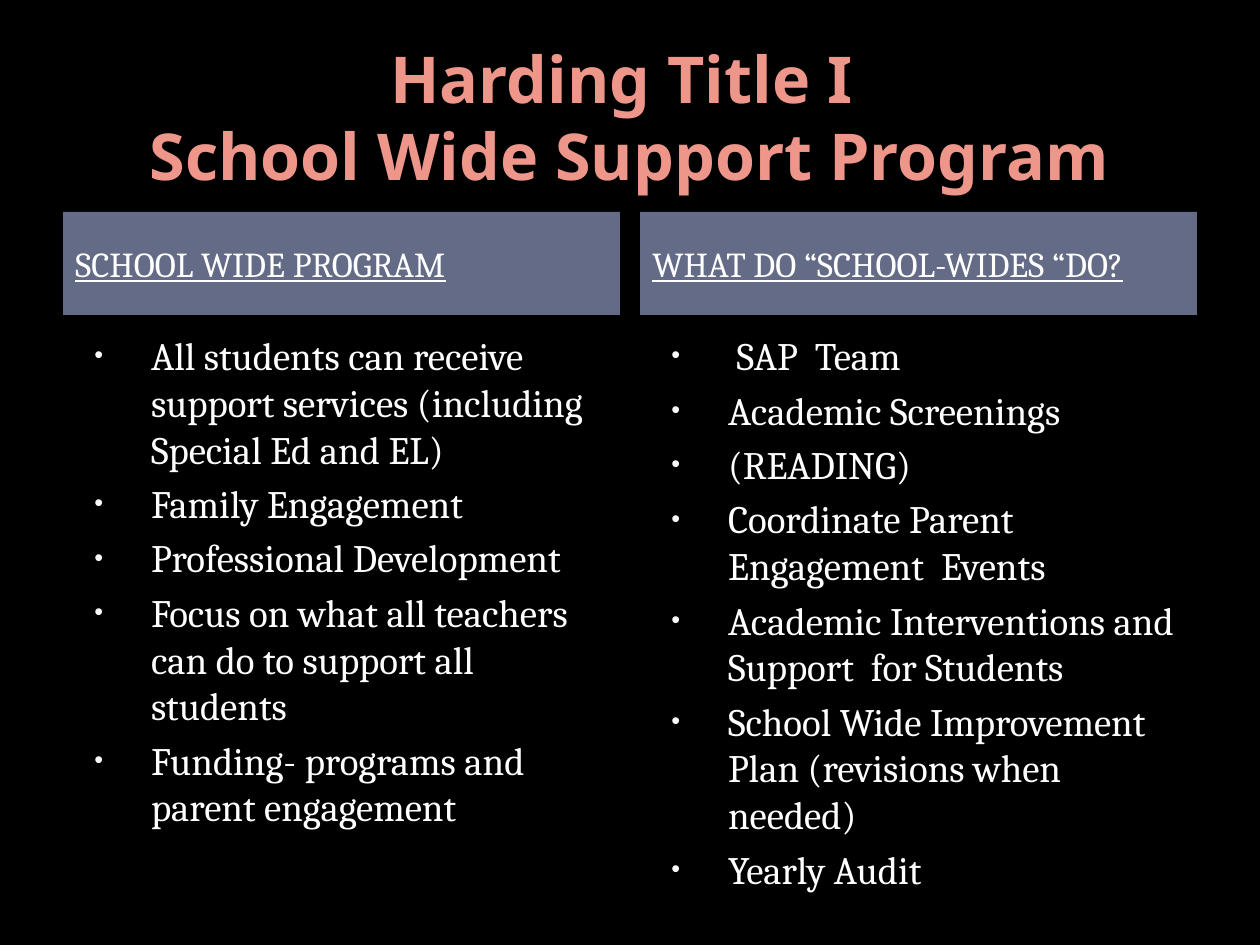
"""Build the school wide support program slide with two headed bullet columns."""
from lxml import etree
from pptx import Presentation
from pptx.dml.color import RGBColor
from pptx.enum.shapes import MSO_SHAPE
from pptx.enum.text import MSO_ANCHOR, PP_ALIGN
from pptx.oxml.ns import qn
from pptx.util import Pt

RECTANGLE = MSO_SHAPE.RECTANGLE
TOP, MIDDLE = MSO_ANCHOR.TOP, MSO_ANCHOR.MIDDLE
LEFT, CENTER = PP_ALIGN.LEFT, PP_ALIGN.CENTER

TITLE = "Harding Title I \vSchool Wide Support Program"
COLUMNS = [
    ("SCHOOL WIDE PROGRAM", [
        "All students can receive support services (including Special Ed and EL)",
        "Family Engagement",
        "Professional Development",
        "Focus on what all teachers can do to support all students",
        "Funding- programs and parent engagement",
    ]),
    ("WHAT DO “SCHOOL-WIDES “DO?", [
        " SAP  Team",
        "Academic Screenings",
        "(READING)",
        "Coordinate Parent Engagement  Events",
        "Academic Interventions and Support  for Students",
        "School Wide Improvement Plan (revisions when needed)",
        "Yearly Audit",
    ]),
]
COLORS = {"page": "000000", "title": "EE968A", "header": "646B86",
          "text": "FFFFFF", "bullet": "F9F9F9"}
TITLE_FONT, BODY_FONT = "Noto Sans", "Cambria"
PAGE_WIDTH, PAGE_HEIGHT = 720, 540
MARGIN, GAP = 36, 11.5
COLUMN_WIDTH = (PAGE_WIDTH - 2 * MARGIN - GAP) / 2


def color(name):
    return RGBColor.from_string(COLORS[name])


def write(box, lines, font, size, shade, anchor=TOP, align=LEFT, leading=None,
          bold=False, underline=False):
    frame = box.text_frame
    frame.word_wrap = True
    frame.vertical_anchor = anchor
    frame.text = "\n".join(lines)
    for para in frame.paragraphs:
        para.alignment = align
        if leading:
            para.line_spacing = Pt(leading)
        for span in para.runs:
            span.font.name = font
            span.font.size = Pt(size)
            span.font.bold = bold
            span.font.underline = underline
            span.font.color.rgb = color(shade)


def add_bullet(para):
    para.space_before = Pt(4.4)
    props = para._p.get_or_add_pPr()
    props.set("marL", str(Pt(43.2)))
    props.set("indent", str(Pt(-32.4)))
    tint = etree.SubElement(props, qn("a:buClr"))
    etree.SubElement(tint, qn("a:srgbClr"), val=COLORS["bullet"])
    etree.SubElement(props, qn("a:buSzPct"), val="65000")
    etree.SubElement(props, qn("a:buFont"), typeface="Arial")
    etree.SubElement(props, qn("a:buChar"), char="•")


def add_column(page, left, heading, items):
    header = page.shapes.add_shape(RECTANGLE, Pt(left), Pt(121), Pt(COLUMN_WIDTH), Pt(59))
    header.shadow.inherit = False
    header.fill.solid()
    header.fill.fore_color.rgb = color("header")
    header.line.fill.background()
    write(header, [heading], BODY_FONT, 20, "text", anchor=MIDDLE, underline=True)

    body = page.shapes.add_textbox(Pt(left), Pt(186), Pt(COLUMN_WIDTH), Pt(296.5))
    write(body, items, BODY_FONT, 22.2, "text", leading=26.7)
    for para in body.text_frame.paragraphs:
        add_bullet(para)


def main():
    deck = Presentation()
    deck.slide_width, deck.slide_height = Pt(PAGE_WIDTH), Pt(PAGE_HEIGHT)
    page = deck.slides.add_slide(deck.slide_layouts[6])
    page.background.fill.solid()
    page.background.fill.fore_color.rgb = color("page")

    title = page.shapes.add_textbox(Pt(MARGIN), Pt(21.6), Pt(PAGE_WIDTH - 2 * MARGIN), Pt(90))
    write(title, [TITLE], TITLE_FONT, 36.9, "title", anchor=MIDDLE, align=CENTER,
          leading=44, bold=True)

    for index, (heading, items) in enumerate(COLUMNS):
        add_column(page, MARGIN + index * (COLUMN_WIDTH + GAP), heading, items)
    deck.save("out.pptx")


if __name__ == "__main__":
    main()
